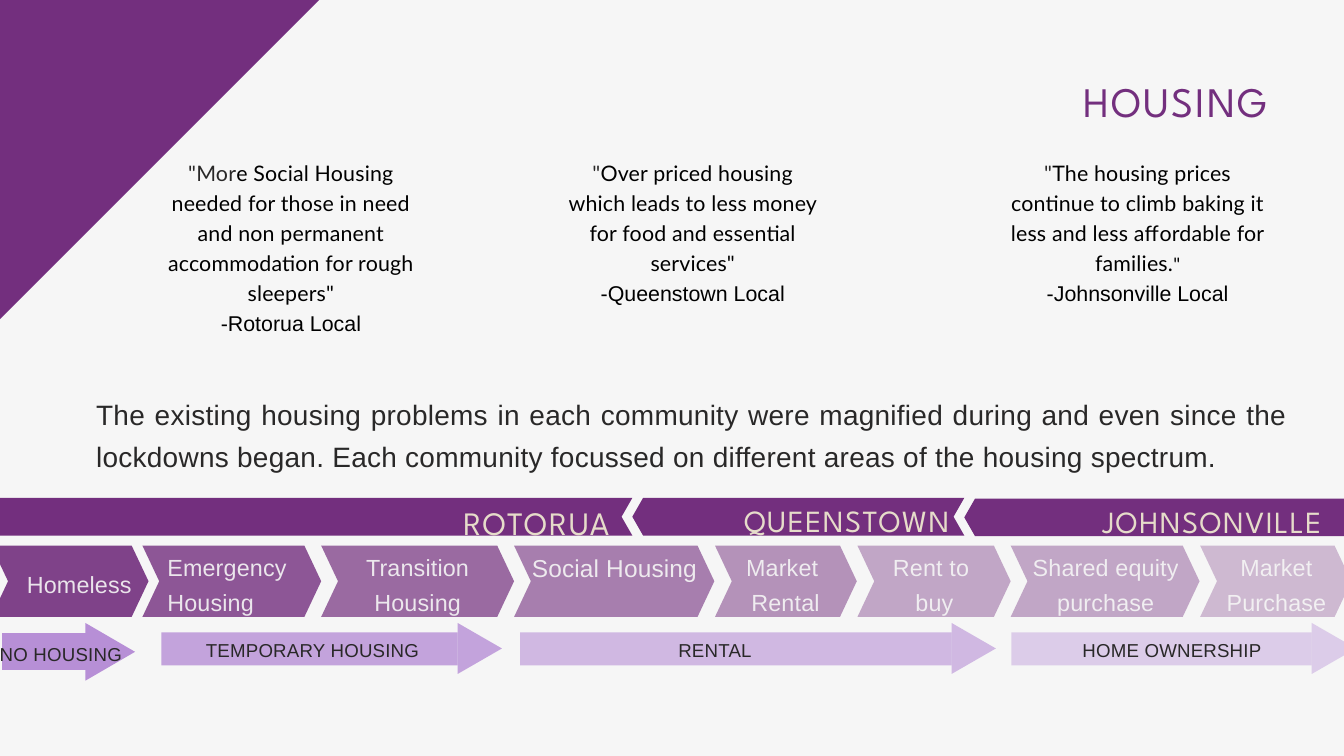
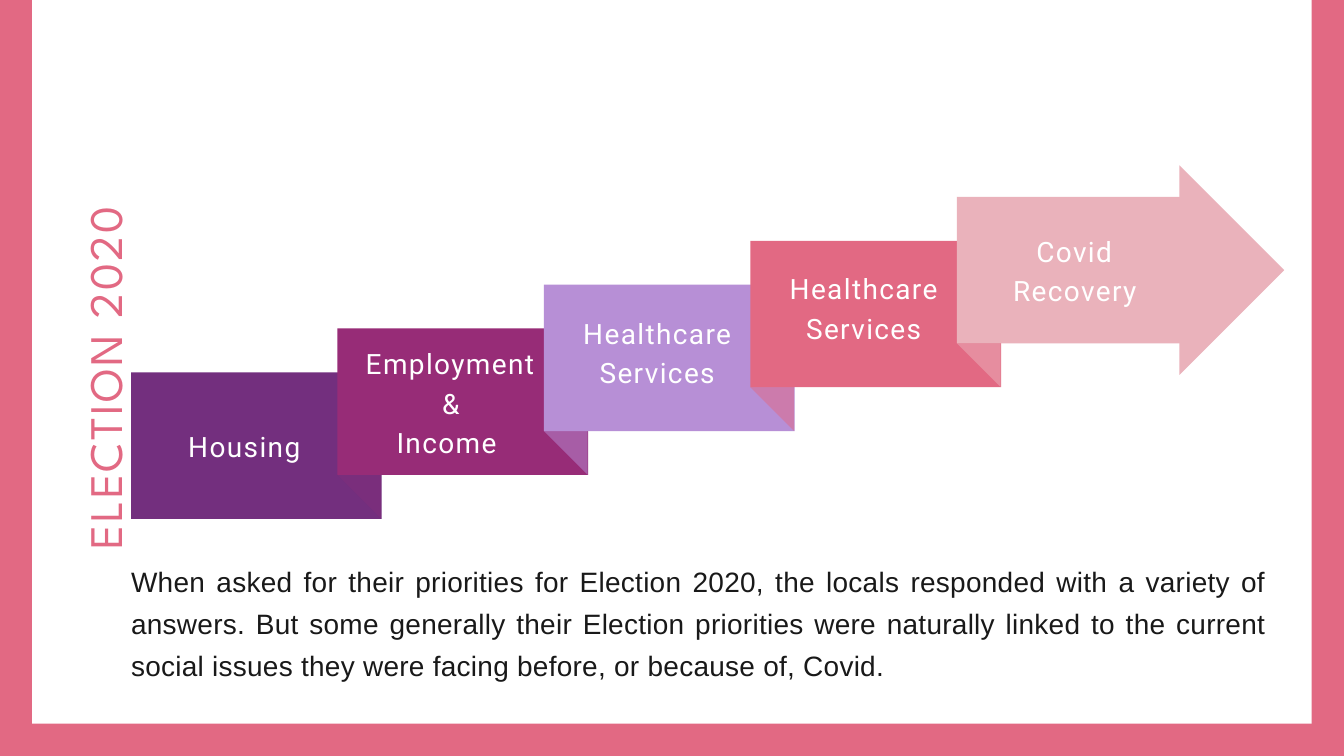
from lxml import etree
from pptx import Presentation
from pptx.dml.color import RGBColor
from pptx.enum.shapes import MSO_SHAPE
from pptx.enum.text import PP_ALIGN
from pptx.oxml.ns import qn
from pptx.util import Inches, Pt

RECTANGLE = MSO_SHAPE.RECTANGLE
CENTER, RIGHT, JUSTIFY = PP_ALIGN.CENTER, PP_ALIGN.RIGHT, PP_ALIGN.JUSTIFY

COLUMNS, ROWS = 20, 11.25
PURPLE, LILAC, PINK, MAGENTA, ROSE = "732F7E", "B78FD6", "E26983", "972C77", "EAB2BB"
PAPER, WHITE, BLACK, INK, CREAM = "F6F6F6", "FFFFFF", "000000", "292828", "E6DCCA"
BODY_FONT, QUOTE_FONT, TITLE_FONT, STEP_FONT = "Arial", "Lato", "League Spartan", "Roboto"


def paint(fill, color, alpha=100):
    fill.solid()
    fill.fore_color.rgb = RGBColor.from_string(color)
    if alpha < 100:
        color_element = fill._xPr.find(qn("a:solidFill"))[0]
        etree.SubElement(color_element, qn("a:alpha")).set("val", str(alpha * 1000))


def add_text(slide, text, left, top, width, height, *, size, line, font=BODY_FONT,
             color=INK, alpha=100, spacing=0.2, align=CENTER, rotation=0):
    box = slide.shapes.add_textbox(Inches(left), Inches(top), Inches(width), Inches(height))
    box.rotation = rotation
    frame = box.text_frame
    frame.word_wrap = True
    frame.margin_left = frame.margin_right = frame.margin_top = frame.margin_bottom = 0
    if isinstance(text, str):
        text = [[(part, {})] for part in text.split("\n")]
    for index, runs in enumerate(text):
        paragraph = frame.paragraphs[0] if index == 0 else frame.add_paragraph()
        paragraph.alignment = align
        paragraph.line_spacing = Pt(line)
        for words, changes in runs:
            run = paragraph.add_run()
            run.text = words
            run.font.size = Pt(changes.get("size", size))
            run.font.name = changes.get("font", font)
            paint(run.font.fill, changes.get("color", color), alpha)
            run.font._element.set("spc", str(round(changes.get("spacing", spacing) * 100)))


presentation = Presentation()
presentation.slide_width = Inches(COLUMNS)
presentation.slide_height = Inches(ROWS)
housing, election = [
    presentation.slides.add_slide(presentation.slide_layouts[6]) for _ in range(2)
]
paint(housing.background.fill, PAPER)
paint(election.background.fill, PINK)

polygons = [(housing, [(0, 4.75), (0, 0), (4.75, 0)], PURPLE, 100)]

stages = [
    ("Homeless", -0.13, 2.21, 90, 0.4, 2.29),
    ("Emergency Housing", 2.12, 4.78, 80, 2.49, 2.29),
    ("Transition Housing", 4.78, 7.65, 70, 5.07, 2.29),
    ("Social Housing", 7.65, 10.63, 60, 7.91, 2.47),
    ("Market \nRental", 10.64, 12.75, 50, 10.91, 1.56),
    ("Rent to \nbuy", 12.76, 15.04, 40, 13.05, 1.71),
    ("Shared equity purchase", 15.04, 17.85, 40, 15.31, 2.29),
    ("Market Purchase", 17.86, 20.11, 30, 18.15, 1.69),
]
towns = [
    ("ROTORUA", -0.29, 9.41, 7.41, 0.86, 35, 49, 1.8),
    ("QUEENSTOWN", 9.41, 14.35, 7.41, 5.92, 33, 46.2, 1.6),
    ("JOHNSONVILLE", 14.35, 24.05, 7.42, 11.46, 33, 46.2, 1.6),
]
chevrons = [(left, right, 8.12, 1.06, 0.25, alpha) for _, left, right, alpha, *_ in stages]
chevrons += [(right, left, top, 0.56, -0.16, 100) for _, left, right, top, *_ in towns]
for tail, tip, top, height, notch, alpha in chevrons:
    middle, bottom = top + height / 2, top + height
    points = [(tail, top), (tip - notch, top), (tip, middle),
              (tip - notch, bottom), (tail, bottom), (tail + notch, middle)]
    polygons.append((housing, points, PURPLE, alpha))

tenures = [
    ("NO HOUSING", 0.03, 1.27, 1.53, 9.42, 0.55, 0.86, 0.74, 100, -0.01, 9.48, 1.83),
    ("TEMPORARY HOUSING", 2.4, 6.81, 6.81, 9.41, 0.49, 0.76, 0.66, 80, 2.49, 9.43, 4.32),
    ("RENTAL", 7.74, 14.16, 14.16, 9.41, 0.49, 0.76, 0.66, 60, 8.51, 9.43, 4.26),
    ("HOME OWNERSHIP", 15.05, 19.52, 19.52, 9.41, 0.49, 0.76, 0.66, 40, 15.31, 9.43, 4.26),
]
HEAD_TOP = 9.27
for _, left, head, right, top, height, head_height, head_width, alpha, *_ in tenures:
    shaft = [(left, top), (right, top), (right, top + height), (left, top + height)]
    point = [(head, HEAD_TOP), (head + head_width, HEAD_TOP + head_height / 2),
             (head, HEAD_TOP + head_height)]
    polygons += [(housing, shaft, LILAC, alpha), (housing, point, LILAC, alpha)]

steps = [
    ("Housing", PURPLE, 0, 0.29, 0.77, 0.57),
    ("Employment &\nIncome ", MAGENTA, 20, 0.29, 0.19, 1.72),
    ("Healthcare\nServices", LILAC, 50, 0.29, 0.39, 1.14),
    ("Healthcare\nServices", PINK, 50, 0.29, 0.38, 1.14),
    ("Covid Recovery", ROSE, 50, 0.36, 0.48, 1.15),
]
STEP_WIDTH, STEP_HEIGHT, FOLD = 3.73, 2.18, 0.65
step_places = [(1.95 + 3.0725 * index, 5.54 - 0.6525 * index) for index in range(len(steps))]
panels = [(0.48, -0.58, 19.04, 11.35, WHITE)]
for (_, color, fold_alpha, *_), (left, top) in zip(steps, step_places):
    panels.append((left, top, STEP_WIDTH, STEP_HEIGHT, color))
    if fold_alpha:
        bottom = top + STEP_HEIGHT
        fold = [(left, bottom), (left + FOLD, bottom), (left + FOLD, bottom + FOLD)]
        polygons.append((election, fold, color, fold_alpha))
polygons.append((election, [(17.55, 2.46), (19.11, 4.02), (17.55, 5.58)], ROSE, 100))

for left, top, width, height, color in panels:
    panel = election.shapes.add_shape(
        RECTANGLE, Inches(left), Inches(top), Inches(width), Inches(height))
    panel.shadow.inherit = False
    panel.line.fill.background()
    paint(panel.fill, color)

for slide, points, color, alpha in polygons:
    corners = [(Inches(x), Inches(y)) for x, y in points]
    builder = slide.shapes.build_freeform(*corners[0])
    builder.add_line_segments(corners[1:], close=True)
    polygon = builder.convert_to_shape()
    polygon.shadow.inherit = False
    polygon.line.fill.background()
    paint(polygon.fill, color, alpha)

add_text(housing, "HOUSING", 6.44, 1, 12.43, 0.84, size=45, line=63,
         font=TITLE_FONT, color=PURPLE, spacing=2.2, align=RIGHT)
add_text(housing, "The existing housing problems in each community were magnified during and "
         "even since the lockdowns began. Each community focussed on different areas of the "
         "housing spectrum. ", 1.43, 5.79, 17.75, 1.23,
         size=30, line=45, spacing=0.3, align=JUSTIFY)

quotes = [
    (2.38, '"Mor', "e Social Housing needed for those in need and non permanent "
     "accommodation for rough sleepers", 22.9, "-Rotorua Local"),
    (8.36, '"', "Over priced housing which leads to less money for food and essential "
     "services", 22.9, "-Queenstown Local"),
    (14.98, '"', "The housing prices continue to climb baking it less and less affordable "
     "for families.", 20, "-Johnsonville Local"),
]
for left, opening, words, closing_size, speaker in quotes:
    quote = [
        [(opening, {}), (words, {"color": BLACK}),
         ('"', {"color": BLACK, "size": closing_size})],
        [(speaker, {"color": BLACK, "font": BODY_FONT, "spacing": 0})],
    ]
    add_text(housing, quote, left, 2.32, 3.9, 3.33, size=22.9, line=32.1, font=QUOTE_FONT)

for name, _, _, top, left, size, line, spacing in towns:
    add_text(housing, name, left, top - 0.03, 8.21, 0.6, size=size, line=line,
             font=TITLE_FONT, color=CREAM, spacing=spacing, align=RIGHT)

for name, _, _, _, left, width in stages:
    size = 26.2 if name == "Social Housing" else 25
    align = JUSTIFY if name in ("Homeless", "Emergency Housing") else CENTER
    top, height = (8.38, 0.48) if name == "Homeless" else (8.12, 0.99)
    add_text(housing, name, left, top, width, height, size=size, line=size * 1.5,
             color=PAPER, alpha=90, align=align)

for name, *_, left, top, width in tenures:
    add_text(housing, name, left, top, width, 0.39, size=20, line=30)

add_text(election, "ELECTION 2020", -2.76, 5.18, 8.53, 0.89, size=50, line=65,
         font=TITLE_FONT, color=PINK, spacing=2.5, rotation=270)
add_text(election, "When asked for their priorities for Election 2020, the locals responded "
         "with a variety of answers. But some generally their Election priorities were "
         "naturally linked to the current social issues they were facing before, or because "
         "of, Covid.", 1.95, 8.27, 16.92, 1.85,
         size=30, line=45, color="191919", spacing=0.3, align=JUSTIFY)
for (name, _, _, indent, drop, height), (left, top) in zip(steps, step_places):
    add_text(election, name, left + indent, top + drop, 2.79, height, size=30, line=42,
             font=STEP_FONT, color=WHITE, spacing=1.5)

presentation.save("out.pptx")
